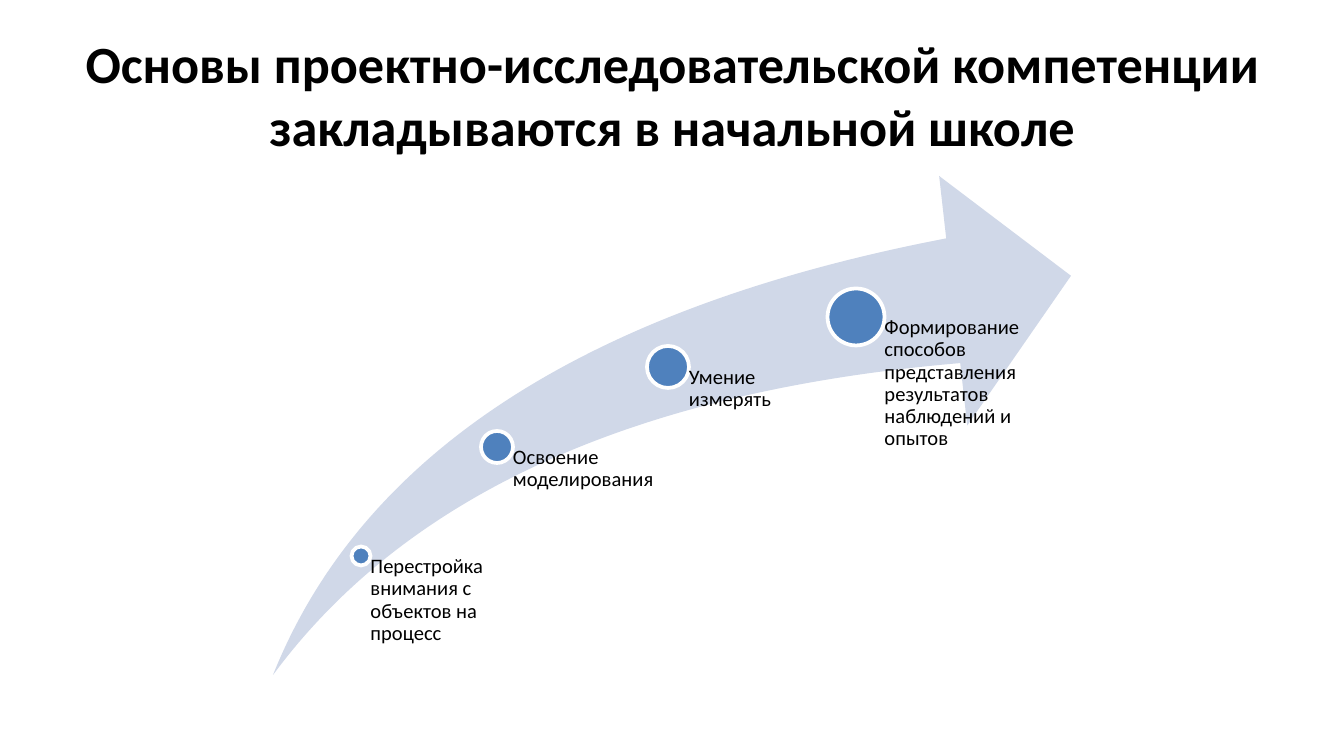
from pptx import Presentation
from pptx.dml.color import RGBColor
from pptx.enum.shapes import MSO_SHAPE
from pptx.enum.text import MSO_ANCHOR, MSO_AUTO_SIZE, PP_ALIGN
from pptx.util import Pt

# Content: text, circle centre x and y, circle diameter, label width (px)
TITLE = "Основы проектно-исследовательской компетенции закладываются в начальной школе"
STAGES = [
    ("Перестройка внимания с объектов на процесс", 361, 556, 19, 137),
    ("Освоение моделирования", 497, 447, 32, 168),
    ("Умение измерять", 668, 367, 42, 168),
    ("Формирование способов представления результатов наблюдений и опытов",
     856, 317, 57, 168),
]

# Layout in px
SCALE = 914400 / 134.4
PAGE = (1344, 756)
TITLE_BOX = (67, 31, 1210, 126)
ARROW_BOX = (273, 176, 798, 499)
LABEL_BOTTOM = ARROW_BOX[1] + ARROW_BOX[3]

# Formats
BLACK = RGBColor(0x00, 0x00, 0x00)
WHITE = RGBColor(0xFF, 0xFF, 0xFF)
BLUE = RGBColor(0x4F, 0x81, 0xBD)
PALE_BLUE = RGBColor(0xD0, 0xD8, 0xE8)
TITLE_FONT = {"name": "Calibri", "size": Pt(28), "bold": True}
LABEL_FONT = {"name": "Calibri", "size": Pt(11), "bold": False}
TITLE_FRAME = {"word_wrap": True, "auto_size": MSO_AUTO_SIZE.NONE,
               "vertical_anchor": MSO_ANCHOR.MIDDLE}
LABEL_FRAME = {"word_wrap": True, "auto_size": MSO_AUTO_SIZE.NONE,
               "vertical_anchor": MSO_ANCHOR.TOP,
               "margin_top": 0, "margin_right": 0, "margin_bottom": 0}
TITLE_PARA = {"alignment": PP_ALIGN.CENTER}
LABEL_PARA = {"alignment": PP_ALIGN.LEFT, "line_spacing": 0.9}


def px(*lengths):
    return [round(length * SCALE) for length in lengths]


def set_values(target, values):
    for name, value in values.items():
        setattr(target, name, value)


def write(box, text, frame_values, para_values, font_values):
    frame = box.text_frame
    set_values(frame, frame_values)
    para = frame.paragraphs[0]
    set_values(para, para_values)
    span = para.add_run()
    span.text = text
    set_values(span.font, font_values)
    span.font.color.rgb = BLACK


def add_figure(shapes, kind, box, fill):
    figure = shapes.add_shape(kind, *px(*box))
    figure.shadow.inherit = False
    figure.fill.solid()
    figure.fill.fore_color.rgb = fill
    figure.line.fill.background()
    return figure


deck = Presentation()
deck.slide_width, deck.slide_height = px(*PAGE)
slide = deck.slides.add_slide(deck.slide_layouts[5])

# Title
title = slide.shapes.title
title.left, title.top, title.width, title.height = px(*TITLE_BOX)
write(title, TITLE, TITLE_FRAME, TITLE_PARA, TITLE_FONT)

# Rising arrow
diagram = slide.shapes.add_group_shape().shapes
arrow = add_figure(diagram, MSO_SHAPE.SWOOSH_ARROW, ARROW_BOX, PALE_BLUE)
arrow.adjustments[0] = 0.25
arrow.adjustments[1] = 0.25

# Stages: each label starts at its circle's centre, inset by the radius
for text, x, y, diameter, width in STAGES:
    radius = diameter / 2
    circle = add_figure(diagram, MSO_SHAPE.OVAL,
                        (x - radius, y - radius, diameter, diameter), BLUE)
    circle.line.color.rgb = WHITE
    circle.line.width = Pt(2)

    label = diagram.add_textbox(*px(x, y, width, LABEL_BOTTOM - y))
    label.text_frame.margin_left = px(radius)[0]
    write(label, text, LABEL_FRAME, LABEL_PARA, LABEL_FONT)

deck.save("out.pptx")
